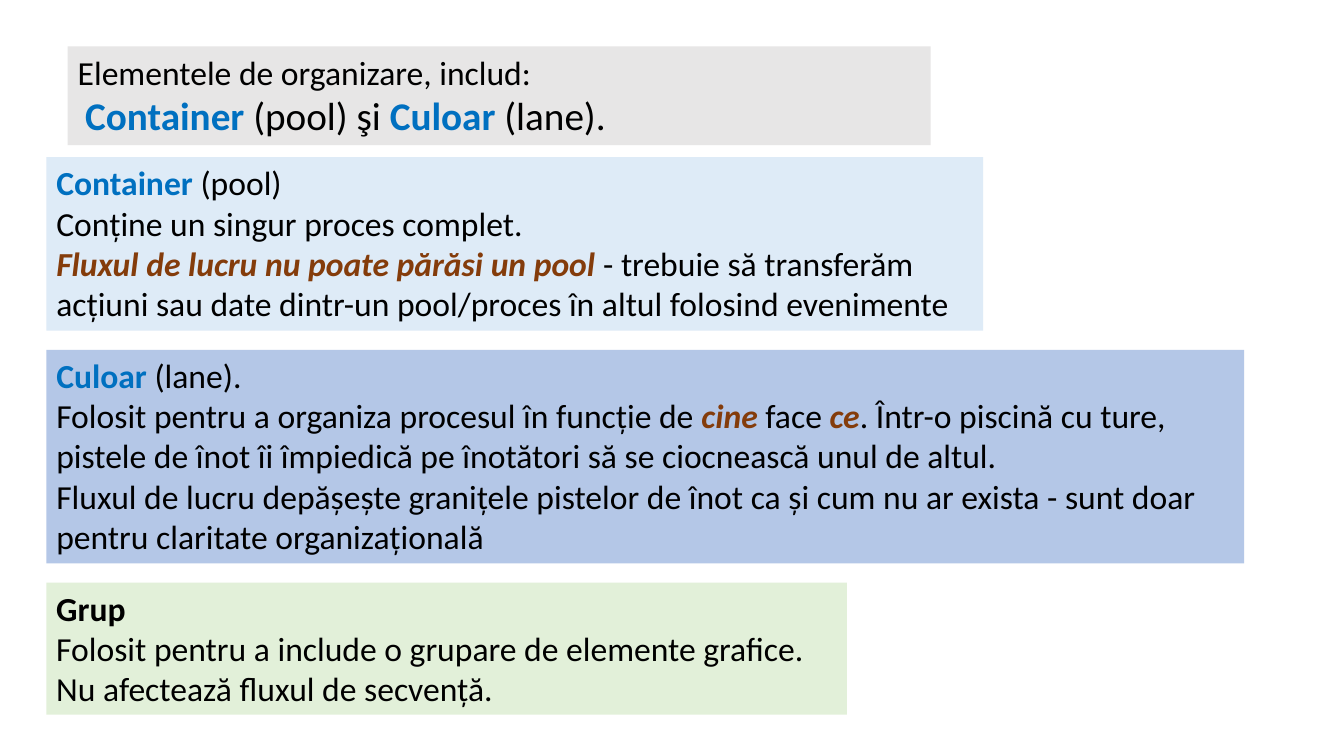
"""Build the slide on the organising elements of a process diagram."""
from pptx import Presentation
from pptx import util as u
from pptx.dml.color import RGBColor
from pptx.enum import text

COLORS = {
    "black": "000000", "blue": "0070C0", "brown": "843C0B",
    "gray": "E7E6E6", "pale_blue": "DEEBF7", "mid_blue": "B4C7E7", "pale_green": "E2F0D9",
}
STYLES = {
    "plain": ("black", 24, False, False),
    "strong": ("black", 24, True, False),
    "term": ("blue", 24, True, False),
    "accent": ("brown", 24, True, True),
    "large": ("black", 28, False, False),
    "large_term": ("blue", 28, True, False),
}

HEADING = ("gray", (0.67, 0.46, 8.56, 0.98), [
    [("Elementele de organizare, includ:", "plain")],
    [(" ", "plain"), ("Container ", "large_term"), ("(pool) şi ", "large"),
     ("Culoar ", "large_term"), ("(lane).", "large")],
])
PANELS = [
    ("pale_blue", (0.46, 1.56, 9.29, 1.72), [
        [("Container ", "term"), ("(pool)", "plain")],
        [("Conține un singur proces complet.", "plain")],
        [("Fluxul de lucru nu poate părăsi un pool ", "accent"),
         ("- trebuie să transferăm acțiuni sau date dintr-un pool/proces "
          "în altul folosind evenimente", "plain")],
    ]),
    ("mid_blue", (0.46, 3.47, 11.88, 2.12), [
        [("Culoar ", "term"), ("(lane).", "plain")],
        [("Folosit pentru a organiza procesul în funcție de ", "plain"), ("cine ", "accent"),
         ("face ", "plain"), ("ce", "accent"),
         (". Într-o piscină cu ture, pistele de înot îi împiedică pe înotători "
          "să se ciocnească unul de altul.", "plain")],
        [("Fluxul de lucru depășește granițele pistelor de înot ca și cum nu ar exista "
          "- sunt doar pentru claritate organizațională", "plain")],
    ]),
    ("pale_green", (0.46, 5.78, 7.94, 1.31), [
        [("Grup", "strong")],
        [("Folosit pentru a include o grupare de elemente grafice.", "plain")],
        [("Nu afectează fluxul de secvență.", "plain")],
    ]),
]


def fill_box(box, fill, place, lines):
    box.left, box.top, box.width, box.height = (u.Inches(side) for side in place)
    box.fill.solid()
    box.fill.fore_color.rgb = RGBColor.from_string(COLORS[fill])
    frame = box.text_frame
    frame.word_wrap = True
    frame.auto_size = text.MSO_AUTO_SIZE.SHAPE_TO_FIT_TEXT
    frame.vertical_anchor = text.MSO_ANCHOR.TOP
    for index, line in enumerate(lines):
        para = frame.add_paragraph() if index else frame.paragraphs[0]
        para.alignment = text.PP_ALIGN.LEFT
        for words, style in line:
            span = para.add_run()
            span.text = words
            color, size, bold, italic = STYLES[style]
            span.font.name = "Calibri"
            span.font.size = u.Pt(size)
            span.font.bold = bold
            span.font.italic = italic
            span.font.color.rgb = RGBColor.from_string(COLORS[color])


def main():
    deck = Presentation()
    deck.slide_width, deck.slide_height = u.Inches(13.33), u.Inches(7.5)
    page = deck.slides.add_slide(deck.slide_layouts.get_by_name("Title Only"))
    fill_box(page.shapes.title, *HEADING)
    for fill, place, lines in PANELS:
        box = page.shapes.add_textbox(0, 0, 0, 0)
        fill_box(box, fill, place, lines)
    deck.save("out.pptx")


if __name__ == "__main__":
    main()
